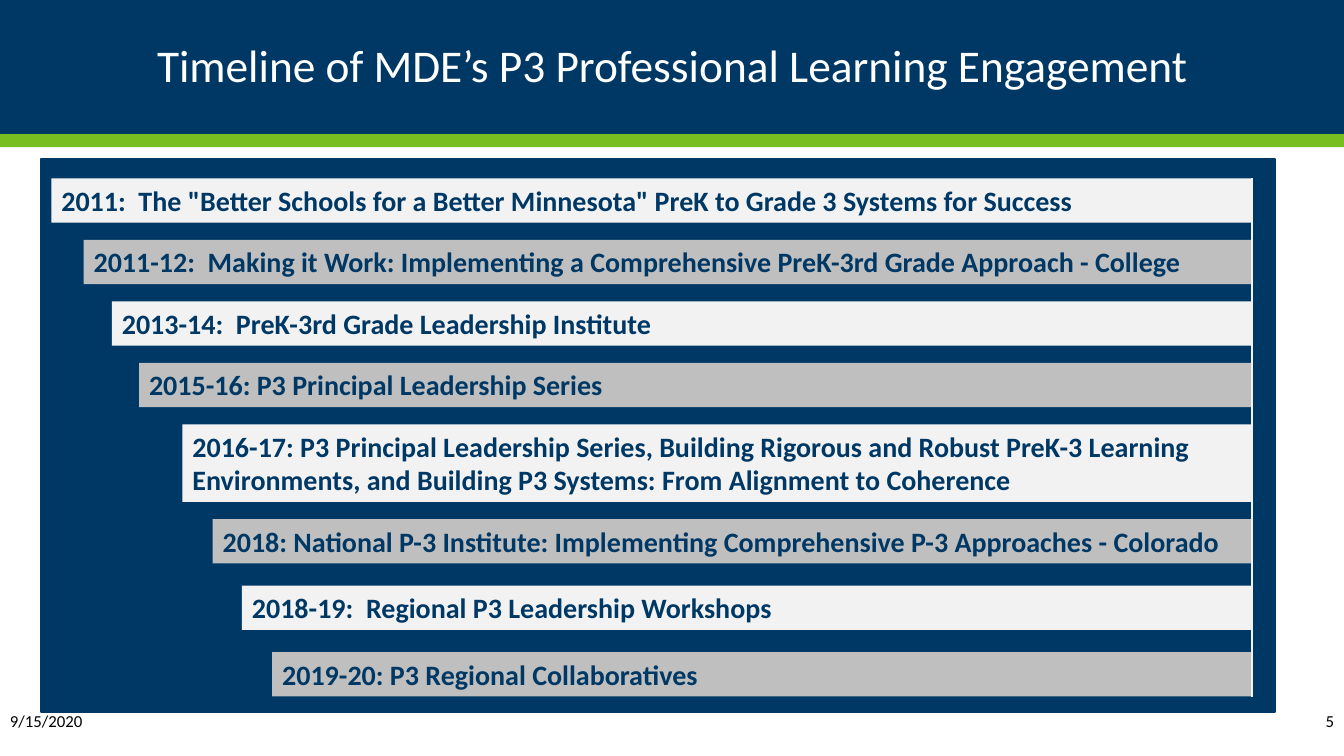
from lxml import etree
from pptx import Presentation
from pptx.dml.color import RGBColor
from pptx.enum.shapes import MSO_CONNECTOR, MSO_SHAPE
from pptx.enum.text import MSO_ANCHOR, PP_ALIGN
from pptx.oxml.ns import qn
from pptx.util import Inches, Pt

RECT, STRAIGHT = MSO_SHAPE.RECTANGLE, MSO_CONNECTOR.STRAIGHT
TOP, MIDDLE = MSO_ANCHOR.TOP, MSO_ANCHOR.MIDDLE
LEFT, CENTER, RIGHT = PP_ALIGN.LEFT, PP_ALIGN.CENTER, PP_ALIGN.RIGHT

TITLE = "Timeline of MDE’s P3 Professional Learning Engagement"
DATE, NUMBER = "9/15/2020", "5"
# left edge, lines of text, gap below, wording
STEPS = [
    (0.51, 1, 0.17, '2011:  The "Better Schools for a Better Minnesota" PreK to Grade 3 Systems for Success'),
    (0.83, 1, 0.17, "2011-12:  Making it Work: Implementing a Comprehensive PreK-3rd Grade Approach - College"),
    (1.11, 1, 0.17, "2013-14:  PreK-3rd Grade Leadership Institute"),
    (1.38, 1, 0.17, "2015-16: P3 Principal Leadership Series"),
    (1.81, 2, 0.17, "2016-17: P3 Principal Leadership Series, Building Rigorous and Robust PreK-3 Learning "
                    "Environments, and Building P3 Systems: From Alignment to Coherence"),
    (2.11, 1, 0.22, "2018: National P-3 Institute: Implementing Comprehensive P-3 Approaches - Colorado"),
    (2.40, 1, 0.22, "2018-19:  Regional P3 Leadership Workshops"),
    (2.70, 1, 0.22, "2019-20: P3 Regional Collaboratives"),
]
COLORS = {"navy": "003865", "green": "78BE21", "light": "F2F2F2",
          "gray": "BFBFBF", "white": "FFFFFF", "black": "000000"}
WIDTH, HEIGHT = 13.33, 7.5
HEADER, STRIPE = 1.33, 0.13
STEPS_TOP, STEPS_RIGHT = 1.77, 12.42
LINE_HEIGHT, PADDING = 0.33, 0.11
FOOTER_TOP, FOOTER_HEIGHT = 6.95, 0.4


def rgb(name):
    return RGBColor.from_string(COLORS[name])


def add_box(slide, fill, *place):
    sp = slide.shapes.add_shape(RECT, *map(Inches, place))
    sp.shadow.inherit = False
    sp.fill.solid()
    sp.fill.fore_color.rgb = rgb(fill)
    sp.line.fill.background()
    return sp


def write(sp, text, size, color, align=LEFT, anchor=MIDDLE, bold=False):
    tf = sp.text_frame
    tf.word_wrap = True
    tf.vertical_anchor = anchor
    p = tf.paragraphs[0]
    p.alignment = align
    r = p.add_run()
    r.text = text
    for name, value in {"name": "Calibri", "size": Pt(size), "bold": bold}.items():
        setattr(r.font, name, value)
    r.font.color.rgb = rgb(color)
    return p


def add_title(slide):
    sp = slide.shapes.title
    place = {"left": 0.92, "top": 0.17, "width": 11.5, "height": 1}
    for name, value in place.items():
        setattr(sp, name, Inches(value))
    write(sp, TITLE, 32.4, "white", CENTER).line_spacing = 0.9
    slide.shapes._spTree.append(sp._element)  # bring in front of the header band


def add_steps(slide):
    """Draw the staircase of bars and the rule along its right edge."""
    top = STEPS_TOP
    for i, (left, lines, gap, text) in enumerate(STEPS):
        height = lines * LINE_HEIGHT + PADDING
        sp = add_box(slide, ("light", "gray")[i % 2], left, top, STEPS_RIGHT - left, height)
        write(sp, text, 20, "navy", anchor=TOP, bold=True)
        bottom = top + height
        top = bottom + gap
    edge = slide.shapes.add_connector(
        STRAIGHT, *map(Inches, (STEPS_RIGHT, STEPS_TOP, STEPS_RIGHT, bottom)))
    edge.line.color.rgb = rgb("light")
    edge.line.width = Pt(1.5)
    etree.SubElement(edge._element.spPr, qn("a:effectLst"))


def main():
    prs = Presentation()
    prs.slide_width, prs.slide_height = Inches(WIDTH), Inches(HEIGHT)
    slide = prs.slides.add_slide(prs.slide_layouts[5])

    add_box(slide, "navy", 0, 0, WIDTH, HEADER)
    add_box(slide, "green", 0, HEADER, WIDTH, STRIPE)
    panel = add_box(slide, "navy", 0.41, 1.58, 12.24, 5.48)
    panel.line.color.rgb = rgb("navy")
    panel.line.width = Pt(1.5)
    add_title(slide)

    for text, left, width, align in ((DATE, 0, 1.49, LEFT), (NUMBER, WIDTH - 1.6, 1.6, RIGHT)):
        sp = slide.shapes.add_textbox(*map(Inches, (left, FOOTER_TOP, width, FOOTER_HEIGHT)))
        write(sp, text, 12, "black", align)
    add_steps(slide)
    prs.save("out.pptx")


if __name__ == "__main__":
    main()
